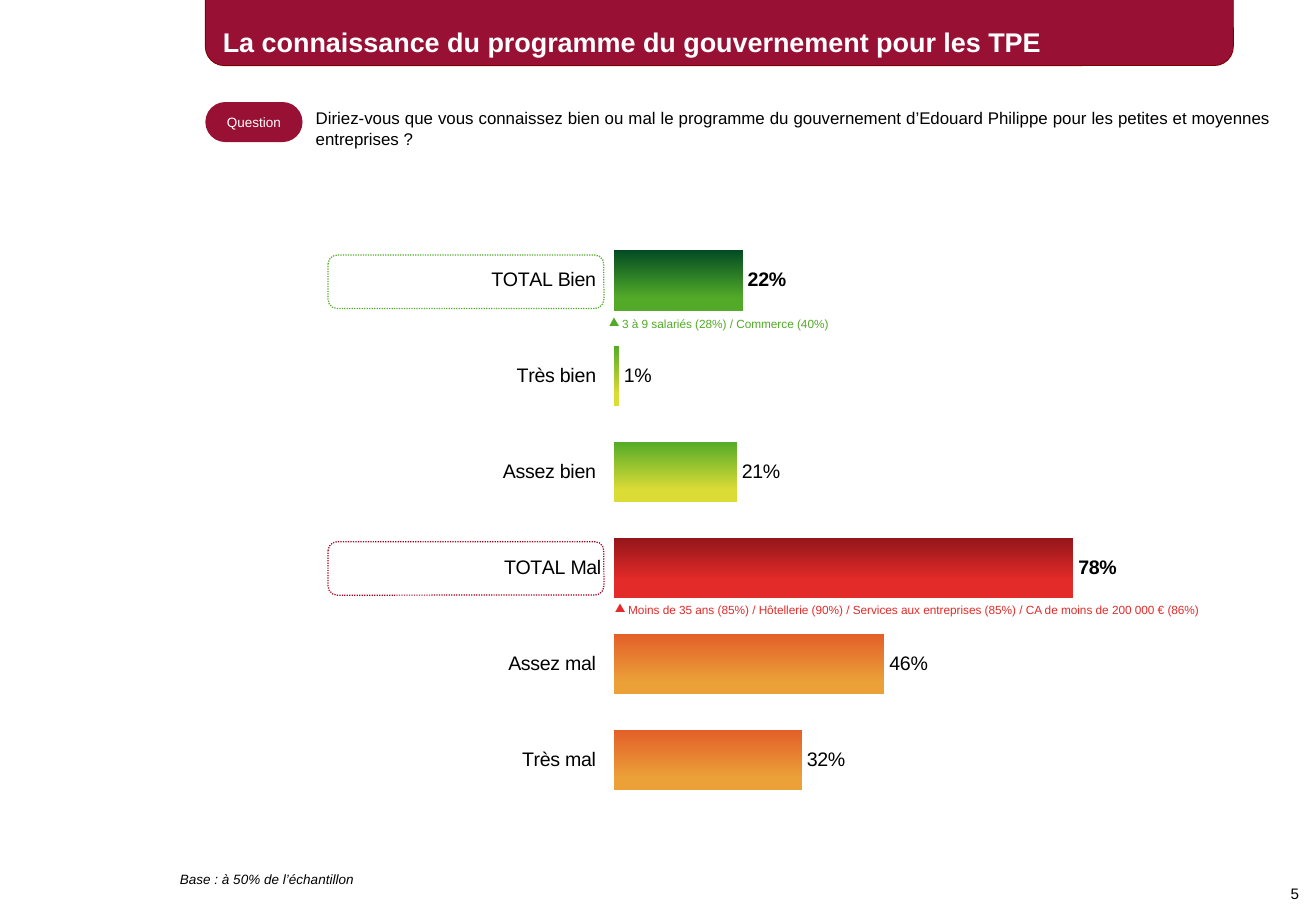
from dataclasses import dataclass

from lxml import etree
from pptx import Presentation
from pptx import util as u
from pptx.chart import data as chart_data
from pptx.dml import color
from pptx.enum import chart as charts
from pptx.enum import dml, shapes, text
from pptx.oxml import ns, parse_xml

CRIMSON = "981135"
GREEN = "52AA28"
RED = "E32B29"
BLACK = "000000"
WHITE = "FFFFFF"
FONT = "Arial"


@dataclass
class Area:
    left: float
    top: float
    width: float
    height: float

    def lengths(self) -> list:
        return [u.Inches(n) for n in (self.left, self.top, self.width, self.height)]


@dataclass
class Style:
    size: float
    ink: str = BLACK
    bold: bool = False
    italic: bool = False
    align: text.PP_ALIGN = text.PP_ALIGN.LEFT
    anchor: text.MSO_ANCHOR = text.MSO_ANCHOR.TOP
    margins: tuple = (0.1, 0.05, 0.1, 0.05)
    bullet: str = ""


@dataclass
class Panel:
    area: Area
    rounding: float
    fill: str = ""
    outline: str = ""
    weight: float = 0.75
    dotted: bool = False


@dataclass
class Gradient:
    start: str
    end: str
    reach: float = 0.8


@dataclass
class Answer:
    label: str
    share: float
    gradient: Gradient
    total: bool = False


GOOD = Gradient(GREEN, "DCDC36")
BAD = Gradient("E35E28", "EBA038")
ANSWERS = [
    Answer("TOTAL Bien ", 0.22, Gradient("004923", GREEN), True),
    Answer("Très bien ", 0.01, GOOD),
    Answer("Assez bien ", 0.21, GOOD),
    Answer("TOTAL Mal", 0.78, Gradient("92151A", RED, 0.7), True),
    Answer("Assez mal ", 0.46, BAD),
    Answer("Très mal ", 0.32, BAD),
]


def rgb(code: str) -> color.RGBColor:
    return color.RGBColor.from_string(code)


def write(shape, wording: str, style: Style) -> None:
    frame = shape.text_frame
    frame.word_wrap = True
    frame.vertical_anchor = style.anchor
    (frame.margin_left, frame.margin_top,
     frame.margin_right, frame.margin_bottom) = [u.Inches(n) for n in style.margins]
    para = frame.paragraphs[0]
    para.text = wording
    para.alignment = style.align
    if style.bullet:
        properties = para._p.get_or_add_pPr()
        properties.set("marL", str(u.Inches(0.11)))
        properties.set("indent", str(u.Inches(-0.11)))
        etree.SubElement(properties, ns.qn("a:buChar"), char=style.bullet)
    font = para.font
    font.name, font.size = FONT, u.Pt(style.size)
    font.bold, font.italic = style.bold, style.italic
    font.color.rgb = rgb(style.ink)


def add_text(page, area: Area, wording: str, style: Style) -> None:
    write(page.shapes.add_textbox(*area.lengths()), wording, style)


def add_panel(page, panel: Panel):
    shape = page.shapes.add_shape(shapes.MSO_SHAPE.ROUNDED_RECTANGLE, *panel.area.lengths())
    shape.adjustments[0] = panel.rounding
    shape.shadow.inherit = False
    if panel.fill:
        shape.fill.solid()
        shape.fill.fore_color.rgb = rgb(panel.fill)
    else:
        shape.fill.background()
    if panel.outline:
        shape.line.color.rgb = rgb(panel.outline)
        shape.line.width = u.Pt(panel.weight)
        if panel.dotted:
            shape.line.dash_style = dml.MSO_LINE.ROUND_DOT
    else:
        shape.line.fill.background()
    return shape


def place_plot(chart, area: Area) -> None:
    plot_area = chart._chartSpace.chart.plotArea
    for layout in plot_area.findall(ns.qn("c:layout")):
        plot_area.remove(layout)
    plot_area.insert(0, parse_xml(
        f'<c:layout {ns.nsdecls("c")}><c:manualLayout><c:layoutTarget val="inner"/>'
        '<c:xMode val="edge"/><c:yMode val="edge"/>'
        f'<c:x val="{area.left}"/><c:y val="{area.top}"/>'
        f'<c:w val="{area.width}"/><c:h val="{area.height}"/>'
        '</c:manualLayout></c:layout>'))


def set_font(font, bold: bool = False) -> None:
    font.name, font.size, font.bold = FONT, u.Pt(11.6), bold
    font.color.rgb = rgb(BLACK)


def paint_bar(point, gradient: Gradient) -> None:
    fill = point.format.fill
    fill.gradient()
    fill.gradient_angle = 270
    first, last = fill.gradient_stops
    first.color.rgb, first.position = rgb(gradient.start), 0
    last.color.rgb, last.position = rgb(gradient.end), gradient.reach
    point.format.line.color.rgb = rgb(WHITE)
    point.format.line.width = u.Pt(0.25)


def add_answers(page, area: Area, answers: list[Answer]) -> None:
    figures = chart_data.CategoryChartData(number_format="0%")
    figures.categories = [answer.label for answer in answers]
    figures.add_series("Series 1", [answer.share for answer in answers])
    chart = page.shapes.add_chart(
        charts.XL_CHART_TYPE.BAR_CLUSTERED, *area.lengths(), figures).chart
    chart.has_legend = chart.has_title = False
    set_font(chart.font)
    place_plot(chart, Area(0.4, 0.03, 0.58, 0.94))

    chart.category_axis.reverse_order = True
    chart.category_axis.format.line.fill.background()
    scale = chart.value_axis
    scale.visible = scale.has_major_gridlines = False
    scale.minimum_scale, scale.maximum_scale = 0, 0.9

    plot = chart.plots[0]
    plot.gap_width = 56
    plot.vary_by_categories = False
    series = plot.series[0]
    labels = series.data_labels
    labels.show_value = True
    labels.number_format, labels.number_format_is_linked = "0%", False
    labels.position = charts.XL_LABEL_POSITION.OUTSIDE_END
    set_font(labels.font)
    for index, answer in enumerate(answers):
        point = series.points[index]
        paint_bar(point, answer.gradient)
        if answer.total:
            set_font(point.data_label.font, bold=True)
            point.data_label.position = charts.XL_LABEL_POSITION.OUTSIDE_END


def main() -> None:
    deck = Presentation()
    deck.slide_width, deck.slide_height = u.Inches(10.83), u.Inches(7.5)
    page = deck.slides.add_slide(deck.slide_layouts[6])

    header = add_panel(page, Panel(Area(1.69, -0.38, 8.46, 0.92), 0.17, CRIMSON, "800000", 0.5))
    write(header, "La connaissance du programme du gouvernement pour les TPE",
          Style(16, WHITE, bold=True, anchor=text.MSO_ANCHOR.BOTTOM,
                margins=(0.1, 0.05, 0.1, 0.02)))
    add_text(page, Area(2.5, 0.84, 8.04, 0.44),
             "Diriez-vous que vous connaissez bien ou mal le programme du gouvernement "
             "d’Edouard Philippe pour les petites et moyennes entreprises ?",
             Style(10, align=text.PP_ALIGN.JUSTIFY))
    tag = add_panel(page, Panel(Area(1.69, 0.84, 0.8, 0.33), 0.5, CRIMSON))
    write(tag, "Question", Style(8, WHITE, align=text.PP_ALIGN.CENTER,
                                 anchor=text.MSO_ANCHOR.MIDDLE))

    add_answers(page, Area(2.03, 1.76, 7.54, 5.04), ANSWERS)
    for top, outline in ((2.1, GREEN), (4.46, "A50021")):
        add_panel(page, Panel(Area(2.7, top, 2.27, 0.44), 0.17, outline=outline, dotted=True))
    for left, top, ink, wording in (
        (5.01, 2.56, GREEN, "3 à 9 salariés (28%) / Commerce (40%)"),
        (5.06, 4.91, RED, "Moins de 35 ans (85%) / Hôtellerie (90%) / Services aux "
                          "entreprises (85%) / CA de moins de 200 000 € (86%)"),
    ):
        add_text(page, Area(left, top, 4.88, 0.22), wording,
                 Style(7, ink, margins=(0, 0.05, 0, 0.05), bullet="▲"))

    flush = (0, 0, 0, 0)
    add_text(page, Area(1.48, 7.09, 6.11, 0.29), "Base : à 50% de l’échantillon",
             Style(8, italic=True, anchor=text.MSO_ANCHOR.MIDDLE, margins=flush))
    add_text(page, Area(8.52, 7.28, 2.17, 0.15), "5",
             Style(9, align=text.PP_ALIGN.RIGHT, margins=flush))
    deck.save("out.pptx")


if __name__ == "__main__":
    main()
